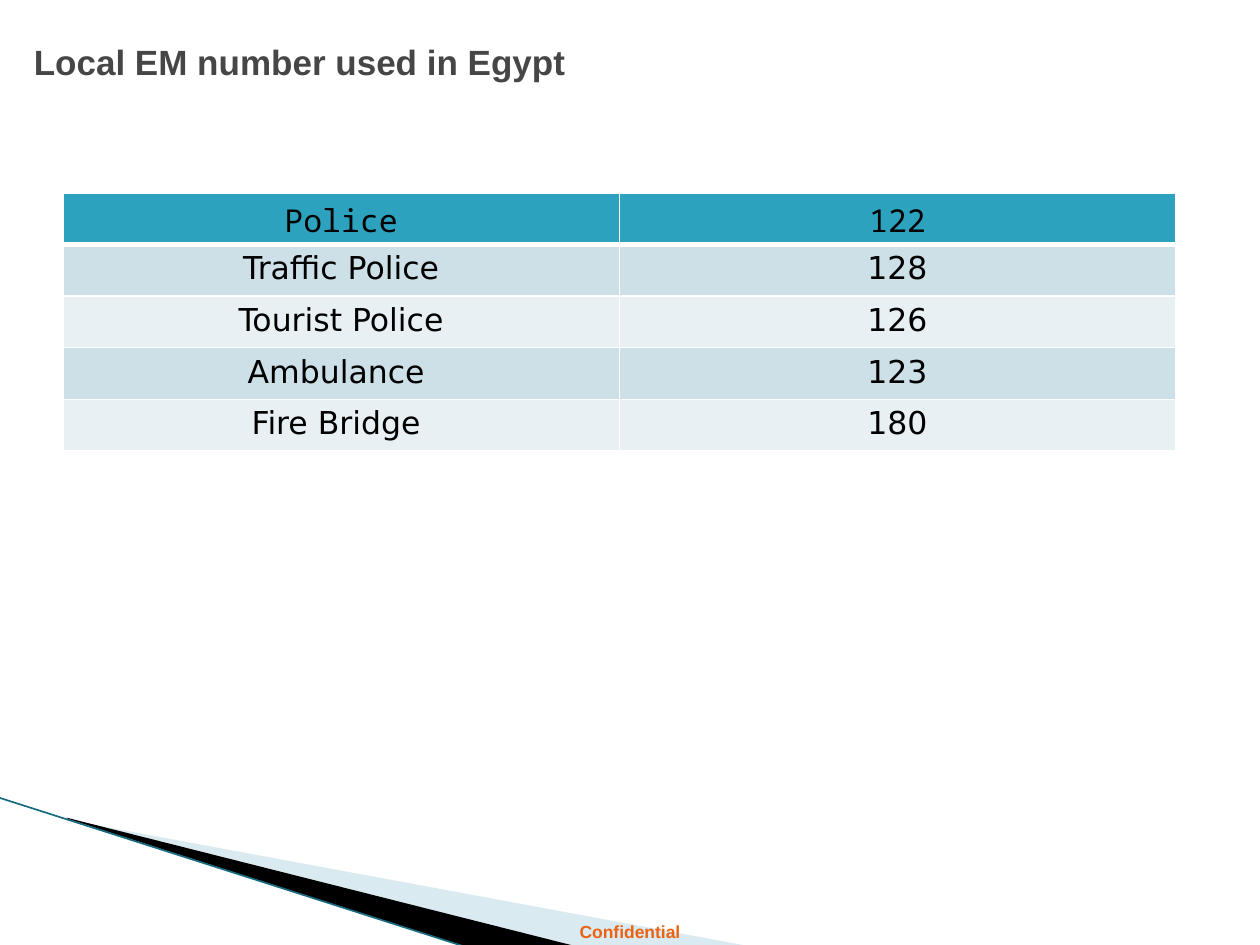
from lxml import etree
from pptx import Presentation
from pptx.dml.color import RGBColor
from pptx.enum.shapes import MSO_CONNECTOR
from pptx.enum.text import MSO_ANCHOR, PP_ALIGN
from pptx.oxml.ns import qn
from pptx.util import Inches, Pt

CENTER, LEFT = PP_ALIGN.CENTER, PP_ALIGN.LEFT
TOP = MSO_ANCHOR.TOP
STRAIGHT = MSO_CONNECTOR.STRAIGHT

BLACK = RGBColor(0x00, 0x00, 0x00)
WHITE = RGBColor(0xFF, 0xFF, 0xFF)
GRAY = RGBColor(0x46, 0x46, 0x46)
ORANGE = RGBColor(0xEB, 0x63, 0x12)
TEAL = RGBColor(0x2D, 0xA2, 0xBF)
DARK_TEAL = RGBColor(0x16, 0x6B, 0x80)
PALE_BLUE = RGBColor(0xA0, 0xCB, 0xDC)
BANDS = [RGBColor(0xCD, 0xE0, 0xE8), RGBColor(0xE8, 0xF0, 0xF4)]

TITLE = "Local EM number used in Egypt"
FOOTER = "Confidential"
# The trailing spaces take part in the centring of these labels.
EMERGENCY_NUMBERS = [
    ("Police", "122"),
    ("Traffic Police", "128"),
    ("Tourist Police", "126"),
    ("Ambulance ", "123"),
    ("Fire Bridge ", "180"),
]

TITLE_FORMAT = {"name": "Arial", "size": Pt(20), "bold": True}
FOOTER_FORMAT = {"name": "Arial", "size": Pt(10), "bold": True}
HEADER_FORMAT = {"name": "Noto Sans Mono", "size": Pt(18), "bold": False}
BODY_FORMAT = {"name": "DejaVu Sans", "size": Pt(18), "bold": False}

# Corner points in inches, fill colour, opacity in percent
WEDGES = [
    ([(0.55, 6.51), (5.95, 7.51), (4.56, 7.51), (0.55, 6.5)], PALE_BLUE, 40),
    ([(0.53, 6.49), (4.57, 7.51), (3.72, 7.52), (0.54, 6.5)], BLACK, 100),
]
EDGE = [(-0.01, 6.33), (3.71, 7.52)]

TABLE_LEFT, TABLE_TOP, TABLE_WIDTH = 0.5, 1.53, 8.83
ROW_HEIGHT = 0.41


def write(frame, text, font_format, color, align):
    paragraph = frame.paragraphs[0]
    paragraph.alignment = align
    run = paragraph.add_run()
    run.text = text
    for attribute, value in font_format.items():
        setattr(run.font, attribute, value)
    run.font.color.rgb = color


def add_text(slide, box, text, font_format, color, align, top_margin=0.05):
    frame = slide.shapes.add_textbox(*map(Inches, box)).text_frame
    frame.word_wrap = True
    frame.vertical_anchor = TOP
    frame.margin_top = Inches(top_margin)
    write(frame, text, font_format, color, align)


def add_wedge(slide, points, color, opacity):
    corners = [(Inches(x), Inches(y)) for x, y in points]
    builder = slide.shapes.build_freeform(*corners[0])
    builder.add_line_segments(corners[1:], close=True)
    wedge = builder.convert_to_shape()
    wedge.shadow.inherit = False
    wedge.line.fill.background()
    wedge.fill.solid()
    wedge.fill.fore_color.rgb = color
    if opacity < 100:
        color_element = wedge.fill._xPr.find(".//" + qn("a:srgbClr"))
        etree.SubElement(color_element, qn("a:alpha"), val=str(opacity * 1000))


def add_edge(slide):
    start, end = EDGE
    edge = slide.shapes.add_connector(STRAIGHT, *map(Inches, start + end))
    edge.line.color.rgb = DARK_TEAL
    edge.line.width = Pt(0.95)
    etree.SubElement(edge._element.spPr, qn("a:effectLst"))


def set_borders(cell, widths):
    """Draw white borders; widths maps a side's tag to points."""
    properties = cell._tc.get_or_add_tcPr()
    for tag, width in widths.items():
        border = etree.SubElement(properties, qn(tag), w=str(Pt(width)))
        fill = etree.SubElement(border, qn("a:solidFill"))
        etree.SubElement(fill, qn("a:srgbClr"), val=str(WHITE))


def add_number_table(slide):
    row_count, column_count = len(EMERGENCY_NUMBERS), len(EMERGENCY_NUMBERS[0])
    box = (TABLE_LEFT, TABLE_TOP, TABLE_WIDTH, ROW_HEIGHT * row_count)
    table = slide.shapes.add_table(row_count, column_count, *map(Inches, box)).table
    for r, entry in enumerate(EMERGENCY_NUMBERS):
        table.rows[r].height = Inches(ROW_HEIGHT)
        is_header = r == 0
        borders = {
            "a:lnL": 1,
            "a:lnR": 1,
            "a:lnT": 3 if r == 1 else 1,
            "a:lnB": 3 if is_header else 1,
        }
        for c, text in enumerate(entry):
            cell = table.cell(r, c)
            set_borders(cell, borders)
            cell.fill.solid()
            cell.fill.fore_color.rgb = TEAL if is_header else BANDS[(r - 1) % 2]
            font_format = HEADER_FORMAT if is_header else BODY_FORMAT
            write(cell.text_frame, text, font_format, BLACK, CENTER)


def main():
    deck = Presentation()
    deck.slide_width, deck.slide_height = Inches(10), Inches(7.5)
    slide = deck.slides.add_slide(deck.slide_layouts[6])
    for wedge in WEDGES:
        add_wedge(slide, *wedge)
    add_edge(slide)
    add_text(slide, (0, 7.26, 10, 0.27), FOOTER, FOOTER_FORMAT, ORANGE, CENTER)
    add_text(slide, (0.17, 0.17, 9, 2), TITLE, TITLE_FORMAT, GRAY, LEFT, 0.15)
    add_number_table(slide)
    deck.save("out.pptx")


if __name__ == "__main__":
    main()
